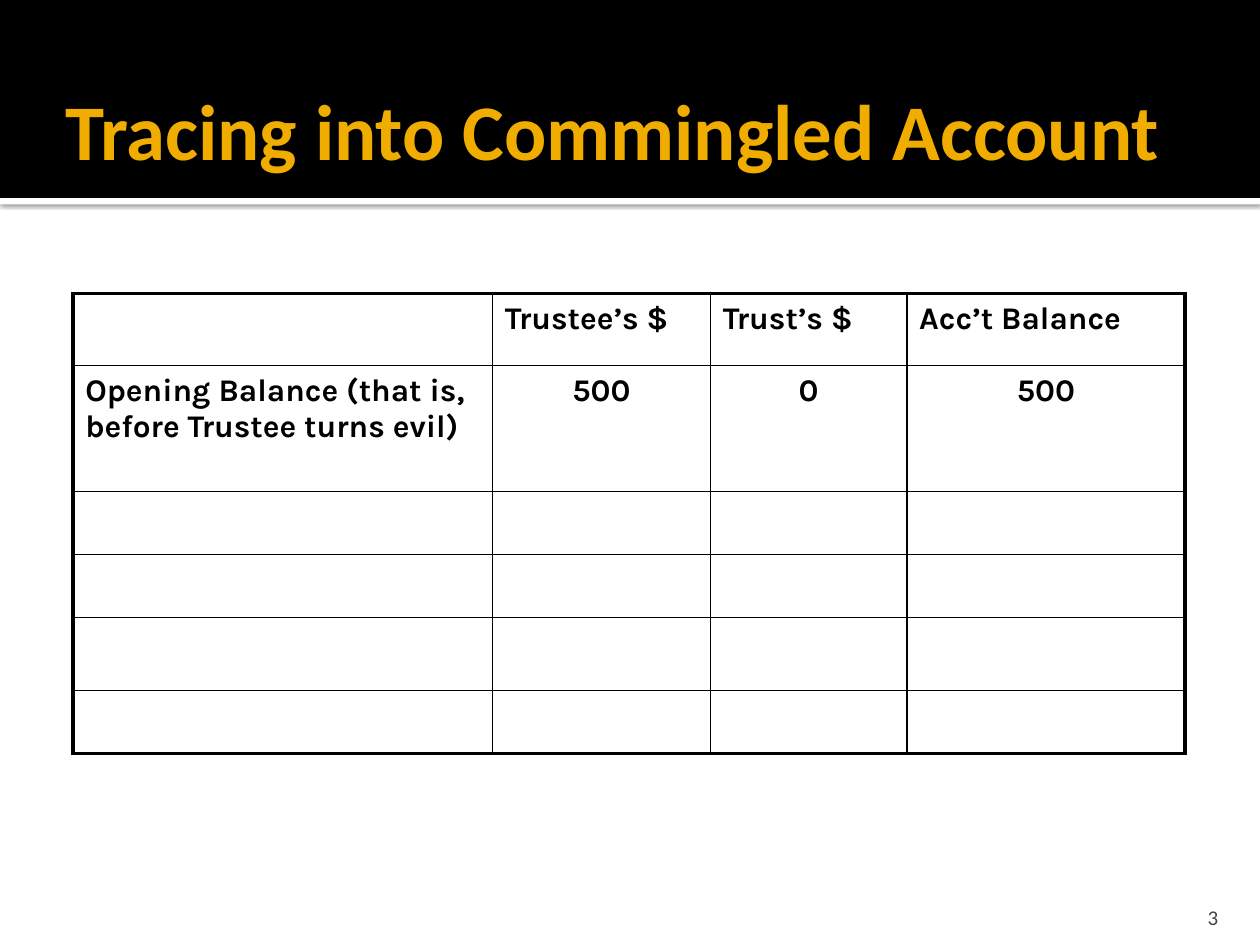
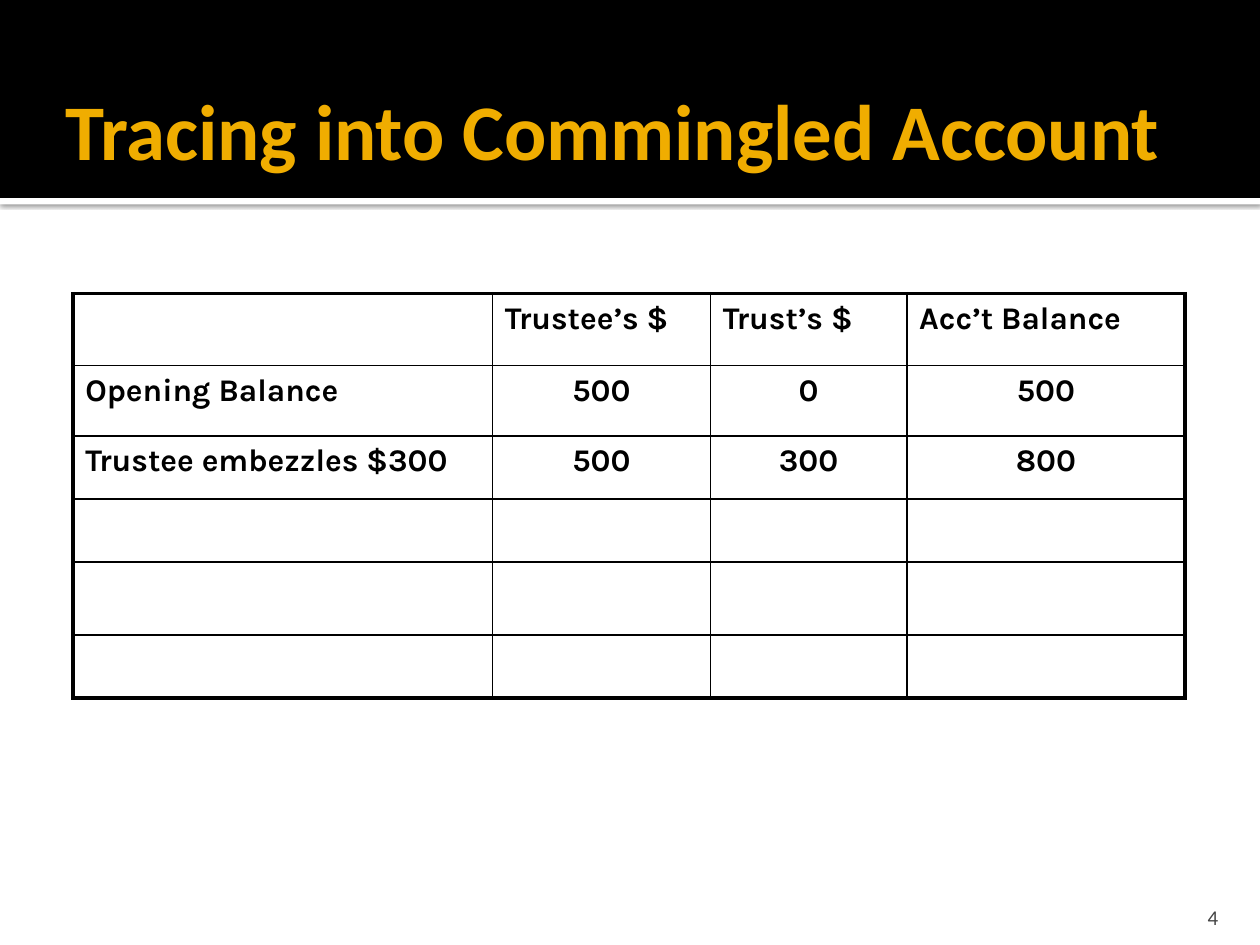
from lxml import etree
from pptx import Presentation
from pptx.dml.color import RGBColor
from pptx.enum.shapes import MSO_SHAPE
from pptx.enum.text import MSO_ANCHOR, MSO_AUTO_SIZE, PP_ALIGN
from pptx.oxml import parse_xml
from pptx.oxml.ns import nsdecls, qn
from pptx.util import Cm, Pt

RECT = MSO_SHAPE.RECTANGLE
MIDDLE, BOTTOM = MSO_ANCHOR.MIDDLE, MSO_ANCHOR.BOTTOM
LEFT, CENTER, RIGHT = PP_ALIGN.LEFT, PP_ALIGN.CENTER, PP_ALIGN.RIGHT
NO_FIT = MSO_AUTO_SIZE.NONE

BLACK, WHITE, GOLD, GRAY = "000000", "FFFFFF", "F0AD00", "454545"
HEAD_FONT, BODY_FONT = "Calibri", "Karla"
WIDE, HIGH = 25.4, 19.05
BAND = (0, 0, WIDE, 3.99)
TITLE = (1.07, 0.58, 23.77, 4.06)
GRID = (1.47, 5.92)
NUMBER = (22.78, 17.98, 2.03, 0.76)
COLS = (8.46, 4.39, 3.96, 5.61)
THIN, THICK = 1, 2.25
HEADS = ("", "Trustee’s $", "Trust’s $", "Acc’t Balance")
BLANK = ("",) * len(HEADS)

SLIDES = (
    (3, (1.45, 2.54, 1.27, 1.27, 1.47, 1.27),
     (("Opening Balance (that is, before Trustee turns evil)",
       "500", "0", "500"),)),
    (4, (1.45, 1.42, 1.27, 1.27, 1.47, 1.27),
     (("Opening Balance", "500", "0", "500"),
      ("Trustee embezzles $300", "500", "300", "800"))),
)


def color(code):
    """Turn a hex string into a colour."""
    return RGBColor.from_string(code)


def place(shape, box):
    """Move and size a shape to a box in centimetres."""
    shape.left, shape.top, shape.width, shape.height = map(Cm, box)


def write(frame, text, font, size, code, bold=False, align=LEFT):
    """Set one line of text and its format."""
    frame.text = text
    para = frame.paragraphs[0]
    para.alignment = align
    for run in para.runs:
        run.font.name = font
        run.font.size = Pt(size)
        run.font.bold = bold
        run.font.color.rgb = color(code)


def pad(frame, left, top, right, bottom):
    """Set the insets of a text frame in centimetres."""
    frame.margin_left, frame.margin_top = Cm(left), Cm(top)
    frame.margin_right, frame.margin_bottom = Cm(right), Cm(bottom)


def bar(slide, box, code):
    """Add a plain filled bar."""
    shape = slide.shapes.add_shape(RECT, *map(Cm, box))
    shape.shadow.inherit = False
    shape.fill.solid()
    shape.fill.fore_color.rgb = color(code)
    shape.line.fill.background()
    return shape


def shade(shape):
    """Give a shape a soft shadow straight below it."""
    effects = shape.element.spPr.find(qn("a:effectLst"))
    effects.append(parse_xml(
        f'<a:outerShdw {nsdecls("a")} blurRad="{Pt(2.5)}" dist="{Pt(0.8)}" '
        'dir="5400000" algn="tl" rotWithShape="0">'
        f'<a:srgbClr val="{BLACK}"><a:alpha val="60000"/></a:srgbClr>'
        '</a:outerShdw>'))


def header(slide, box, text):
    """Draw the black band, its white edge and the title."""
    left, top, width, height = box
    shade(bar(slide, (left, top + height, width, 0.13), WHITE))
    bar(slide, box, BLACK)
    title = slide.shapes.title
    title.element.getparent().append(title.element)
    place(title, TITLE)
    frame = title.text_frame
    frame.word_wrap = True
    frame.auto_size = NO_FIT
    frame.vertical_anchor = MIDDLE
    pad(frame, 0.25, 0.13, 0.13, 0.13)
    write(frame, text, HEAD_FONT, 45, GOLD, True)


def edge(cell, side, width):
    """Draw one border of a cell."""
    props = cell._tc.get_or_add_tcPr()
    line = etree.SubElement(props, qn(f"a:ln{side}"), w=str(Pt(width)))
    fill = etree.SubElement(line, qn("a:solidFill"))
    etree.SubElement(fill, qn("a:srgbClr"), val=BLACK)


def ledger(slide, spot, heights, rows):
    """Add the account table with a thick outer frame."""
    left, top = spot
    count = len(heights)
    box = (left, top, sum(COLS), sum(heights))
    table = slide.shapes.add_table(count, len(COLS), *map(Cm, box)).table
    table.first_row = table.horz_banding = False
    for col, width in zip(table.columns, COLS):
        col.width = Cm(width)
    for row, height in zip(table.rows, heights):
        row.height = Cm(height)
    lines = [HEADS, *rows]
    lines += [BLANK] * (count - len(lines))
    for y, line in enumerate(lines):
        for x, text in enumerate(line):
            cell = table.cell(y, x)
            outer = {"L": x == 0, "R": x == len(COLS) - 1,
                     "T": y == 0, "B": y == count - 1}
            for side, thick in outer.items():
                edge(cell, side, THICK if thick else THIN)
            cell.fill.background()
            pad(cell, 0.25, 0.13, 0.25, 0.13)
            write(cell.text_frame, text, BODY_FONT, 18, BLACK, True,
                  CENTER if x and y else LEFT)


def footer(slide, box, number):
    """Add the slide number."""
    frame = slide.shapes.add_textbox(*map(Cm, box)).text_frame
    frame.word_wrap = True
    frame.vertical_anchor = BOTTOM
    pad(frame, 0.25, 0.13, 0.25, 0)
    write(frame, str(number), HEAD_FONT, 12, GRAY, align=RIGHT)


def main():
    """Build and save the slides."""
    deck = Presentation()
    deck.slide_width, deck.slide_height = Cm(WIDE), Cm(HIGH)
    layout = deck.slide_layouts.get_by_name("Title Only")
    for number, heights, rows in SLIDES:
        slide = deck.slides.add_slide(layout)
        header(slide, BAND, "Tracing into Commingled Account")
        ledger(slide, GRID, heights, rows)
        footer(slide, NUMBER, number)
    deck.save("out.pptx")


if __name__ == "__main__":
    main()
